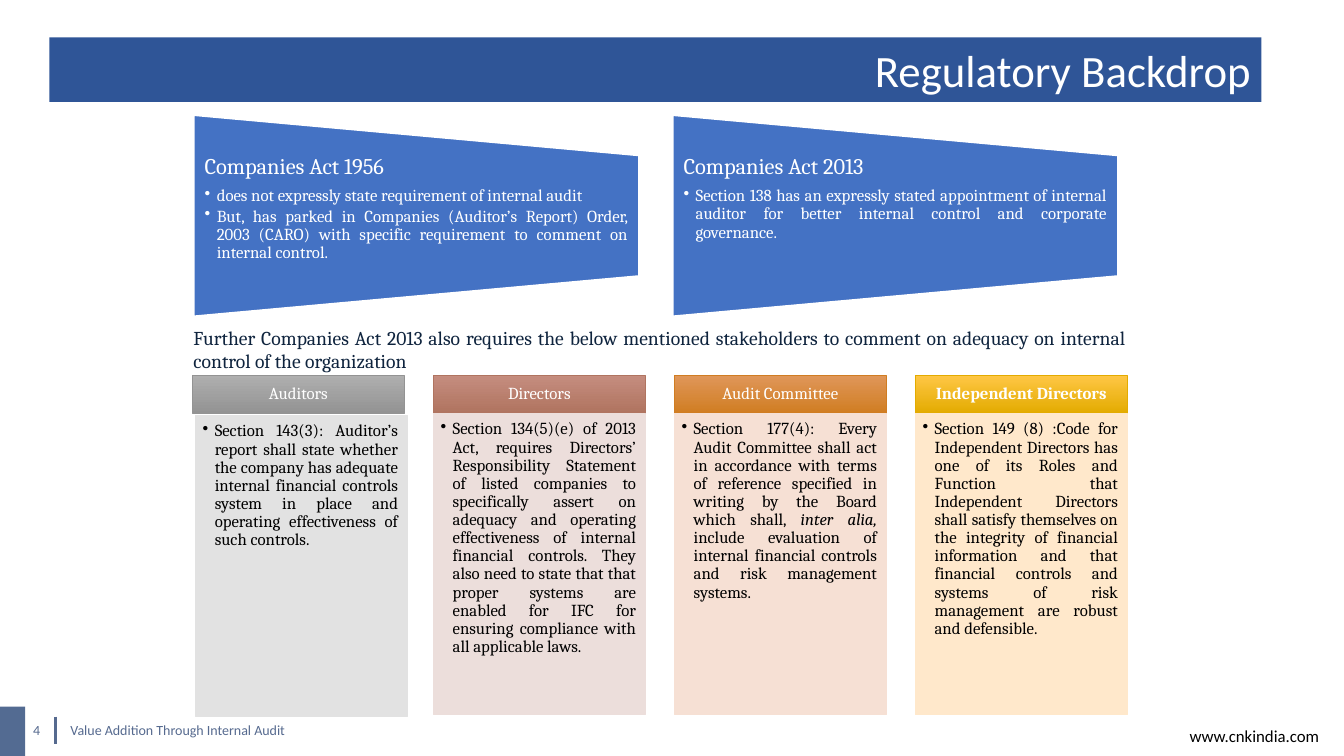
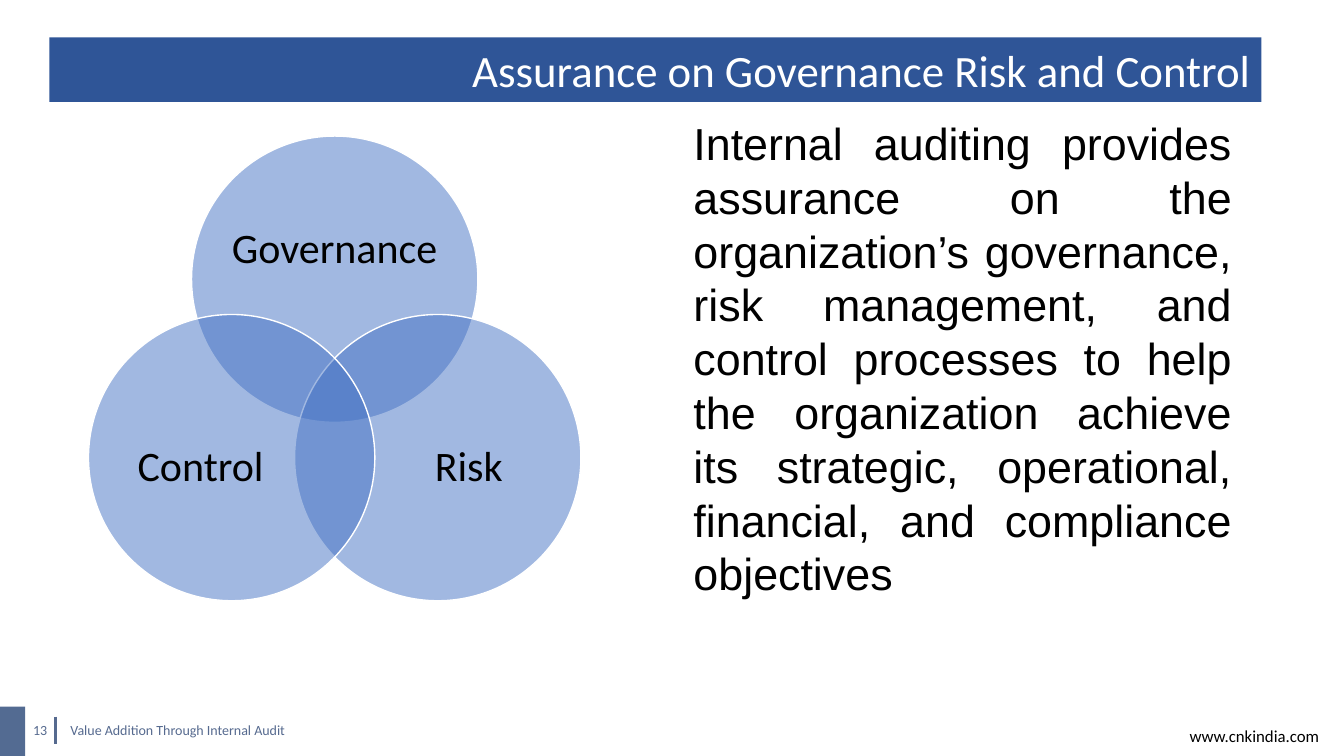
from math import cos, radians, sin

from lxml import etree
from pptx import Presentation
from pptx.dml.color import RGBColor
from pptx.enum.shapes import MSO_CONNECTOR, MSO_SHAPE
from pptx.enum.text import MSO_ANCHOR, MSO_AUTO_SIZE, PP_ALIGN
from pptx.oxml.ns import qn
from pptx.util import Pt

RECT, OVAL = MSO_SHAPE.RECTANGLE, MSO_SHAPE.OVAL
TRAPEZOID = MSO_SHAPE.FLOWCHART_MANUAL_OPERATION
STRAIGHT = MSO_CONNECTOR.STRAIGHT
TOP, MIDDLE = MSO_ANCHOR.TOP, MSO_ANCHOR.MIDDLE
LEFT, CENTER, RIGHT = PP_ALIGN.LEFT, PP_ALIGN.CENTER, PP_ALIGN.RIGHT
JUSTIFY = PP_ALIGN.JUSTIFY
NO_AUTOFIT = MSO_AUTO_SIZE.NONE

PX = 9144  # 100 px to the inch
SLIDE_W, SLIDE_H = 1333, 750
TITLE_ONLY = 5
DEFAULT_INSETS = (10, 5, 10, 5)
BULLET_INDENT = 12

COLORS = {
    "band": "2F5597", "corner": "536B92", "footer": "566A8F",
    "blue": "4472C4", "white": "FFFFFF", "black": "000000", "navy": "0F243E",
}
FOOTER = "Value Addition Through Internal Audit"
WEBSITE = "www.cnkindia.com"

BACKDROP = {"title": "Regulatory Backdrop", "number": "4"}
ACTS = [
    ("Companies Act 1956", [
        "does not expressly state requirement of internal audit",
        "But, has parked in Companies (Auditor’s Report) Order, 2003 (CARO) with "
        "specific requirement to comment on internal control.",
    ]),
    ("Companies Act 2013", [
        "Section 138 has an expressly stated appointment of internal auditor for "
        "better internal control and corporate governance.",
    ]),
]
FURTHER = ("Further Companies Act 2013 also requires the below mentioned stakeholders "
           "to comment on adequacy on internal control of the organization")
# role, bold, (gradient top, gradient bottom, body tint), body offset, runs as (text, italic)
STAKEHOLDERS = [
    ("Auditors", False, ("AFAFAF", "939393", "E2E2E2"), (3, 2), [
        ("Section 143(3): Auditor’s report shall state whether the company has adequate "
         "internal financial controls system in place and operating effectiveness of "
         "such controls.", False)]),
    ("Directors", False, ("C58D7F", "B07460", "ECDEDB"), (0, 0), [
        ("Section 134(5)(e) of 2013 Act, requires Directors’ Responsibility Statement of "
         "listed companies to specifically assert on adequacy and operating effectiveness "
         "of internal financial controls. They also need to state that that proper systems "
         "are enabled for IFC for ensuring compliance with all applicable laws.", False)]),
    ("Audit Committee", False, ("E0975A", "D07D22", "F6E0D4"), (0, 0), [
        ("Section 177(4): Every Audit Committee shall act in accordance with terms of "
         "reference specified in writing by the Board which shall, ", False),
        ("inter alia, ", True),
        ("include evaluation of internal financial controls and risk management systems.",
         False)]),
    ("Independent Directors", True, ("FFC746", "E3AB00", "FFE8CB"), (0, 0), [
        ("Section 149 (8) :Code for Independent Directors has one of its Roles and Function "
         "that Independent Directors shall satisfy themselves on the integrity of financial "
         "information and that financial controls and systems of risk management are robust "
         "and defensible.", False)]),
]

ASSURANCE = {"title": "Assurance on Governance Risk and Control", "number": "13"}
ASSURANCE_TEXT = (
    "Internal auditing provides assurance on the organization’s governance, risk "
    "management, and control processes to help the organization achieve its strategic, "
    "operational, financial, and compliance objectives")
# label, angle of the circle, label offset from the middle of the diagram
VENN = [
    ("Governance", -90, (0, -147)),
    ("Risk", 30, (133, 69)),
    ("Control", 150, (-133, 69)),
]


def rgb(color):
    return RGBColor.from_string(COLORS.get(color, color))


def emu(*lengths):
    return [round(length * PX) for length in lengths]


def add_box(slide, kind, place, fill, line=None, line_width=1):
    """Add a flat preset shape with a solid fill and an optional outline."""
    box = slide.shapes.add_shape(kind, *emu(*place))
    box.shadow.inherit = False
    box.fill.solid()
    box.fill.fore_color.rgb = rgb(fill)
    if line:
        box.line.color.rgb = rgb(line)
        box.line.width = Pt(line_width)
    else:
        box.line.fill.background()
    return box


def prepare_frame(holder, anchor=TOP, insets=DEFAULT_INSETS):
    frame = holder.text_frame
    frame.word_wrap = True
    frame.auto_size = NO_AUTOFIT
    frame.vertical_anchor = anchor
    (frame.margin_left, frame.margin_top,
     frame.margin_right, frame.margin_bottom) = emu(*insets)
    return frame


def write(frame, runs, size, color, font="Calibri", align=LEFT, bold=False,
          spacing=None, after=0, bullet=False):
    """Write one paragraph, reusing the first one while it is empty."""
    paragraph = frame.paragraphs[0]
    if paragraph.runs:
        paragraph = frame.add_paragraph()
    paragraph.alignment = align
    if spacing:
        paragraph.line_spacing = spacing
    paragraph.space_after = Pt(after)
    if bullet:
        properties = paragraph._p.get_or_add_pPr()
        indent = BULLET_INDENT * PX
        properties.set("marL", str(indent))
        properties.set("indent", str(-indent))
        etree.SubElement(properties, qn("a:buChar")).set("char", "•")
    for words, italic in runs:
        run = paragraph.add_run()
        run.text = words
        run.font.name = font
        run.font.size = Pt(size)
        run.font.bold = bold
        run.font.italic = italic
        run.font.color.rgb = rgb(color)


def add_label(slide, place, words, size, color, anchor=TOP, insets=DEFAULT_INSETS, **style):
    label = slide.shapes.add_textbox(*emu(*place))
    write(prepare_frame(label, anchor, insets), [(words, False)], size, color, **style)


def start_slide(deck, title, number):
    """Add a slide with the title band and the footer."""
    slide = deck.slides.add_slide(deck.slide_layouts[TITLE_ONLY])
    band = slide.shapes.title
    band.left, band.top, band.width, band.height = emu(49, 37, 1202, 64)
    band.fill.solid()
    band.fill.fore_color.rgb = rgb("band")
    write(prepare_frame(band, MIDDLE), [(title, False)], 32, "white", align=RIGHT)

    add_box(slide, RECT, (0, 701, 25, 49), "corner")
    add_label(slide, (23, 704, 41, 40), number, 10, "footer", MIDDLE)
    divider = slide.shapes.add_connector(STRAIGHT, *emu(55, 711, 55, 738))
    divider.line.color.rgb = rgb("footer")
    divider.line.width = Pt(1.75)
    etree.SubElement(divider._element.spPr, qn("a:effectLst"))
    add_label(slide, (60, 711, 272, 30), FOOTER, 10, "footer")
    add_label(slide, (1170, 715, 160, 30), WEBSITE, 12, "black")
    return slide


def add_act(slide, left, name, points):
    top, width, height = 114, 442, 200
    # The preset is drawn upright and turned, so its sides are swapped about the centre.
    turned = (left + (width - height) / 2, top + (height - width) / 2, height, width)
    add_box(slide, TRAPEZOID, turned, "blue", "white", 1.5).rotation = 270
    text = slide.shapes.add_textbox(*emu(left, top + 40, width, 120))
    frame = prepare_frame(text, insets=(11, 0, 11, 0))
    style = {"font": "Cambria", "align": JUSTIFY, "spacing": 0.9}
    write(frame, [(name, False)], 16, "white", after=5.6, **style)
    for point in points:
        write(frame, [(point, False)], 12, "white", after=1.8, bullet=True, **style)


def add_stakeholder(slide, left, role, bold, colors, offset, duty):
    top, width, header_height, body_height = 372, 210, 38, 299
    light, dark, tint = colors
    header = add_box(slide, RECT, (left, top, width, header_height), light, dark, 0.5)
    header.fill.gradient()
    header.fill.gradient_angle = 270
    for stop, color in zip(header.fill.gradient_stops, (light, dark)):
        stop.color.rgb = rgb(color)
    write(prepare_frame(header, MIDDLE, (9, 5, 9, 5)), [(role, False)], 12, "white",
          font="Cambria", align=CENTER, bold=bold, spacing=0.9)

    shift_x, shift_y = offset
    body = add_box(slide, RECT, (left + shift_x, top + header_height + shift_y,
                                 width, body_height), tint, tint, 0.5)
    write(prepare_frame(body, insets=(7, 7, 9, 10)), duty, 12, "black",
          font="Cambria", align=JUSTIFY, spacing=0.9, bullet=True)


def build_backdrop(deck):
    slide = start_slide(deck, **BACKDROP)
    for index, act in enumerate(ACTS):
        add_act(slide, 192 + 475 * index, *act)
    for index, stakeholder in enumerate(STAKEHOLDERS):
        add_stakeholder(slide, 191 + 239 * index, *stakeholder)
    add_label(slide, (182, 318, 945, 57), FURTHER, 14, "navy",
              font="Cambria", align=JUSTIFY)


def build_assurance(deck):
    slide = start_slide(deck, **ASSURANCE)
    add_label(slide, (678, 110, 554, 495), ASSURANCE_TEXT, 32, "black",
              font="Arial", align=JUSTIFY)
    middle_x, middle_y, orbit, diameter = 332, 395, 118, 284
    label_w, label_h = 220, 60
    for name, angle, (label_x, label_y) in VENN:
        left = middle_x + orbit * cos(radians(angle)) - diameter / 2
        top = middle_y + orbit * sin(radians(angle)) - diameter / 2
        circle = add_box(slide, OVAL, (left, top, diameter, diameter), "blue", "white")
        fill_color = circle._element.spPr.find(qn("a:solidFill"))[0]
        etree.SubElement(fill_color, qn("a:alpha")).set("val", "50000")
        add_label(slide, (middle_x + label_x - label_w / 2,
                          middle_y + label_y - label_h / 2, label_w, label_h),
                  name, 30, "black", MIDDLE, (0, 0, 0, 0), align=CENTER, spacing=0.9)


def main():
    deck = Presentation()
    deck.slide_width, deck.slide_height = emu(SLIDE_W, SLIDE_H)
    build_backdrop(deck)
    build_assurance(deck)
    deck.save("out.pptx")


if __name__ == "__main__":
    main()
